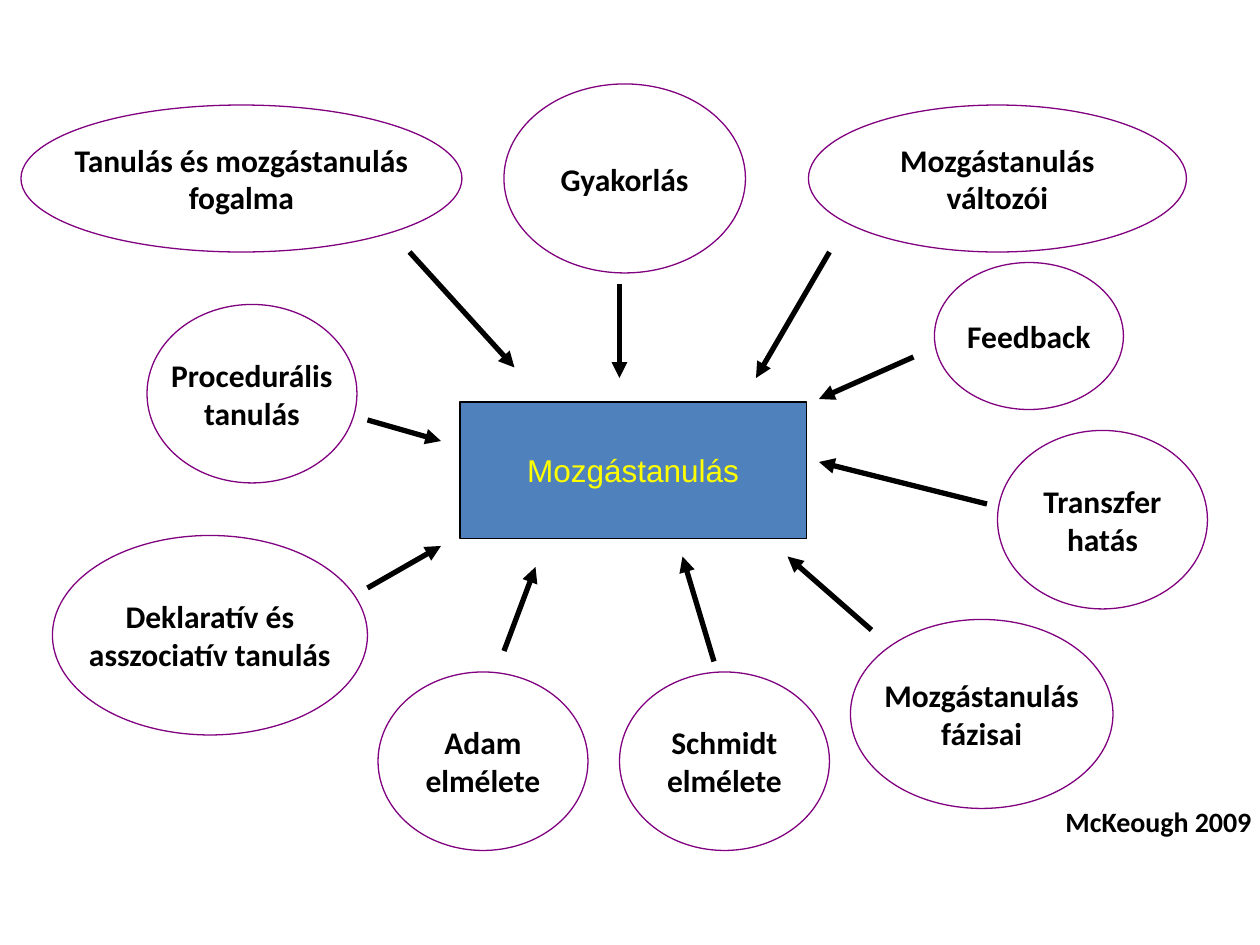
from typing import NamedTuple

from pptx import Presentation
from pptx.dml.color import RGBColor
from pptx.enum.shapes import MSO_CONNECTOR, MSO_SHAPE
from pptx.enum.text import MSO_ANCHOR, MSO_AUTO_SIZE, PP_ALIGN
from pptx.oxml.ns import qn
from pptx.util import Inches, Pt
from lxml import etree

OVAL, RECTANGLE = MSO_SHAPE.OVAL, MSO_SHAPE.RECTANGLE
STRAIGHT = MSO_CONNECTOR.STRAIGHT
MIDDLE, CENTER = MSO_ANCHOR.MIDDLE, PP_ALIGN.CENTER
FIT_SHAPE = MSO_AUTO_SIZE.SHAPE_TO_FIT_TEXT

# The slide is a grid of 120 columns by 90 rows, twelve to the inch
COLUMNS, ROWS, CELLS_PER_INCH = 120, 90, 12
BLACK, PURPLE, BLUE, YELLOW = "000000", "800080", "4F81BD", "FFFF00"


class Area(NamedTuple):
    column: float
    row: float
    columns: float
    rows: float


class Topic(NamedTuple):
    label: str
    area: Area
    arrow_start: tuple[int, int]
    arrow_end: tuple[int, int]


# Clockwise from the upper left
TOPICS = [
    Topic("Tanulás és mozgástanulás\nfogalma", Area(2, 10, 42, 14), (39, 24), (49, 35)),
    Topic("Gyakorlás", Area(48, 8, 23, 18), (59, 27), (59, 36)),
    Topic("Mozgástanulás\nváltozói", Area(77, 10, 36, 14), (79, 24), (72, 36)),
    Topic("Feedback", Area(89, 25, 18, 14), (87, 34), (78, 38)),
    Topic("Transzfer\nhatás", Area(95, 41, 20, 17), (94, 48), (78, 44)),
    Topic("Mozgástanulás\nfázisai", Area(81, 59, 25, 18), (83, 60), (75, 53)),
    Topic("Schmidt\nelmélete", Area(59, 64, 20, 17), (68, 63), (65, 53)),
    Topic("Adam\nelmélete", Area(36, 64, 20, 17), (48, 62), (51, 54)),
    Topic("Deklaratív és\nasszociatív tanulás", Area(5, 51, 30, 19), (35, 56), (42, 52)),
    Topic("Procedurális\ntanulás", Area(14, 29, 20, 17), (35, 40), (42, 42)),
]


def cells(count: float) -> int:
    return Inches(count / CELLS_PER_INCH)


def color(hex_code: str) -> RGBColor:
    return RGBColor.from_string(hex_code)


def write(frame, text: str, size: int, font_name: str, hex_code: str, bold: bool) -> None:
    frame.word_wrap = False
    paragraph = frame.paragraphs[0]
    paragraph.text = text
    for run in paragraph.runs:
        run.font.size = Pt(size)
        run.font.name = font_name
        run.font.bold = bold
        run.font.color.rgb = color(hex_code)


def draw_node(slide, kind, area: Area, outline: str, fill: str | None = None):
    node = slide.shapes.add_shape(kind, *map(cells, area))
    node.shadow.inherit = False
    if fill:
        node.fill.solid()
        node.fill.fore_color.rgb = color(fill)
    else:
        node.fill.background()
    node.line.color.rgb = color(outline)
    node.line.width = Pt(0.75)
    node.text_frame.vertical_anchor = MIDDLE
    node.text_frame.paragraphs[0].alignment = CENTER
    return node


def draw_arrow(slide, start: tuple[int, int], end: tuple[int, int]) -> None:
    arrow = slide.shapes.add_connector(STRAIGHT, *map(cells, start + end))
    arrow.line.color.rgb = color(BLACK)
    arrow.line.width = Pt(3)
    etree.SubElement(arrow.line._get_or_add_ln(), qn("a:tailEnd"), type="triangle")
    etree.SubElement(arrow._element.spPr, qn("a:effectLst"))


def main() -> None:
    deck = Presentation()
    deck.slide_width, deck.slide_height = cells(COLUMNS), cells(ROWS)
    slide = deck.slides.add_slide(deck.slide_layouts[6])

    # Central concept
    concept = draw_node(slide, RECTANGLE, Area(43.8, 38.3, 33, 13), BLACK, BLUE)
    write(concept.text_frame, "Mozgástanulás", 18, "Arial", YELLOW, False)

    # Topics around it, each with an arrow towards the centre
    for topic in TOPICS:
        bubble = draw_node(slide, OVAL, topic.area, PURPLE)
        write(bubble.text_frame, topic.label, 18, "Calibri", BLACK, True)
        draw_arrow(slide, topic.arrow_start, topic.arrow_end)

    # Citation
    citation = slide.shapes.add_textbox(*map(cells, Area(100.3, 76, 20.4, 4.4)))
    write(citation.text_frame, "McKeough 2009", 16, "Calibri", BLACK, True)
    citation.text_frame.auto_size = FIT_SHAPE

    deck.save("out.pptx")


if __name__ == "__main__":
    main()
